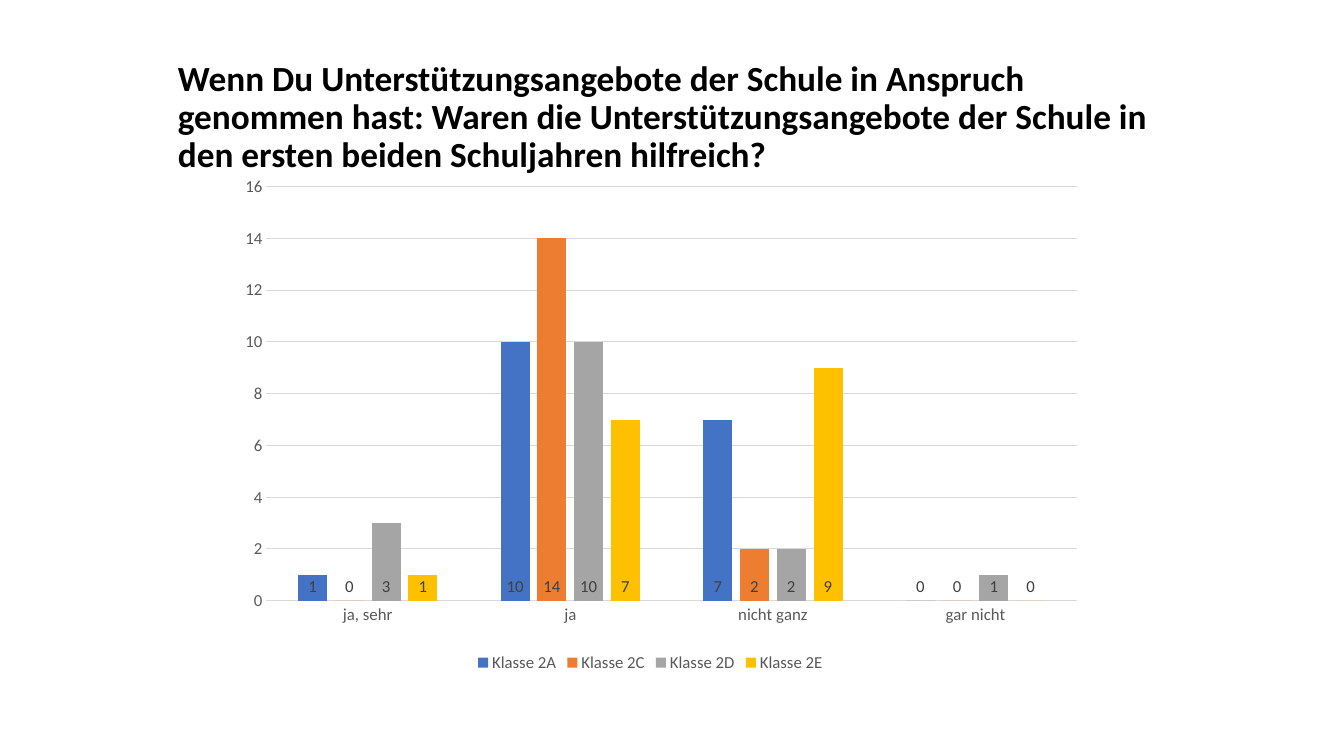
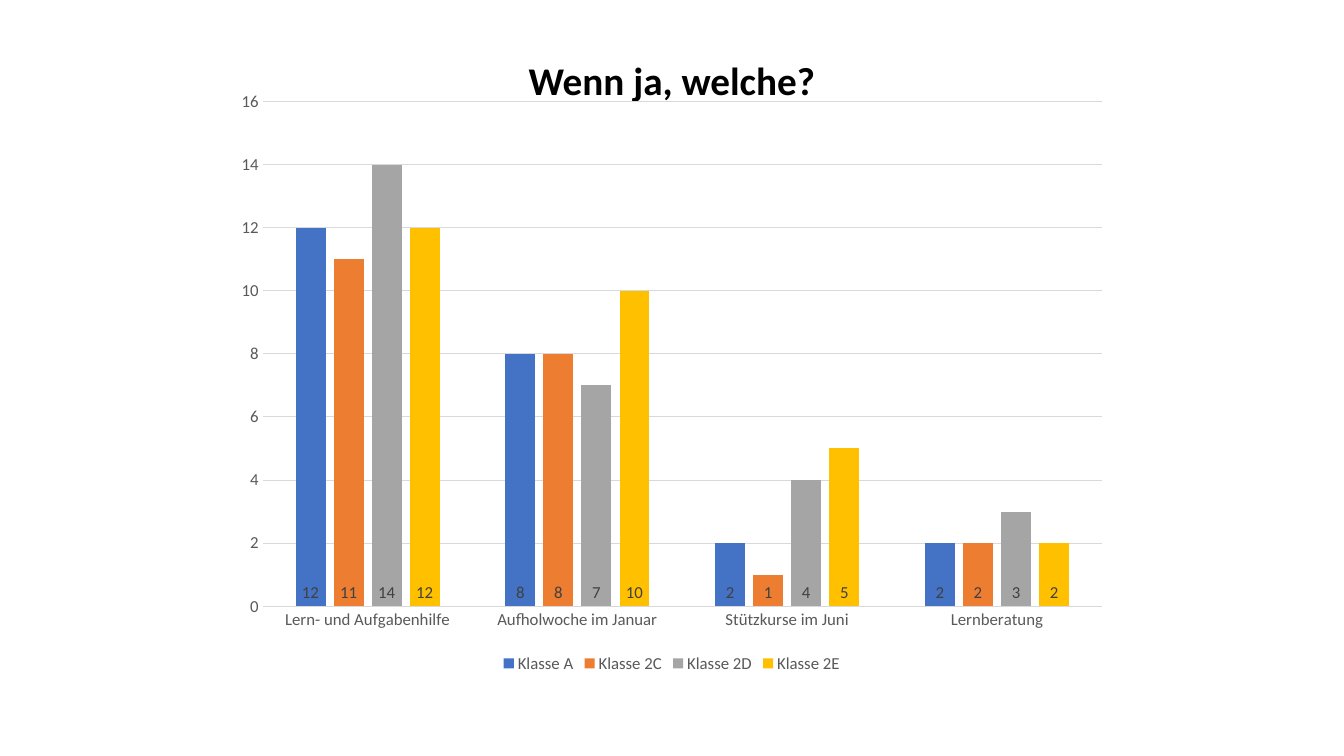
from dataclasses import dataclass

from lxml import etree
from pptx import Presentation
from pptx.chart.data import CategoryChartData
from pptx.dml.color import RGBColor
from pptx.enum.chart import XL_CHART_TYPE as ChartType
from pptx.enum.chart import XL_LABEL_POSITION as LabelPosition
from pptx.enum.chart import XL_LEGEND_POSITION as LegendPosition
from pptx.enum.chart import XL_TICK_MARK as TickMark
from pptx.enum.text import MSO_ANCHOR as Anchor
from pptx.enum.text import MSO_AUTO_SIZE as AutoSize
from pptx.enum.text import PP_ALIGN as Align
from pptx.oxml.ns import qn
from pptx.util import Cm, Pt


@dataclass(frozen=True)
class Theme:
    font: str = "Calibri"
    title_color: str = "000000"
    axis_color: str = "595959"
    label_color: str = "404040"
    line_color: str = "D9D9D9"
    series_colors: tuple = ("4472C4", "ED7D31", "A5A5A5", "FFC000")
    chart_size: float = 12
    line_width: float = 0.75


THEME = Theme()
TITLE_ONLY = 5


def rgb(color):
    return RGBColor.from_string(color)


def style_font(font, size, color, bold=False):
    font.name = THEME.font
    font.size = Pt(size)
    font.bold = bold
    font.color.rgb = rgb(color)


def style_line(line):
    line.color.rgb = rgb(THEME.line_color)
    line.width = Pt(THEME.line_width)


# Title
def set_title(page, text, box, size, align):
    title = page.shapes.title
    title.left, title.top, title.width, title.height = map(Cm, box)
    frame = title.text_frame
    frame.text = text
    frame.word_wrap = True
    frame.auto_size = AutoSize.NONE
    frame.vertical_anchor = Anchor.BOTTOM
    para = frame.paragraphs[0]
    para.alignment = align
    para.line_spacing = 0.9
    style_font(para.font, size, THEME.title_color, bold=True)


# Chart
def style_axes(chart):
    for axis in (chart.category_axis, chart.value_axis):
        axis.major_tick_mark = axis.minor_tick_mark = TickMark.NONE
        style_font(axis.tick_labels.font, THEME.chart_size, THEME.axis_color)
    style_line(chart.category_axis.format.line)
    values = chart.value_axis
    values.format.line.fill.background()
    style_line(values.major_gridlines.format.line)
    values.minimum_scale, values.maximum_scale = 0, 16
    values.major_unit = 2


def style_series(series, color):
    series.format.fill.solid()
    series.format.fill.fore_color.rgb = rgb(color)
    series.invert_if_negative = False
    labels = series.data_labels
    labels.show_value = True
    labels.position = LabelPosition.INSIDE_BASE
    style_font(labels.font, THEME.chart_size, THEME.label_color)


def place_plot(chart, fractions):
    """Fix the inner plot area as x, y, w, h fractions of the chart."""
    plot_area = chart.plots[0]._element.getparent()
    for old in plot_area.findall(qn("c:layout")):
        plot_area.remove(old)
    layout = etree.Element(qn("c:layout"))
    manual = etree.SubElement(layout, qn("c:manualLayout"))
    settings = [("layoutTarget", "inner"), ("xMode", "edge"), ("yMode", "edge")]
    for name, value in settings + list(zip("xywh", fractions)):
        etree.SubElement(manual, qn(f"c:{name}")).set("val", str(value))
    plot_area.insert(0, layout)


def add_column_chart(page, box, categories, rows, plot_box=None):
    data = CategoryChartData(number_format="General")
    data.categories = categories
    for name, values in rows.items():
        data.add_series(name, values)
    chart = page.shapes.add_chart(
        ChartType.COLUMN_CLUSTERED, *map(Cm, box), data).chart
    chart.has_title = False
    style_font(chart.font, THEME.chart_size, THEME.axis_color)
    chart.has_legend = True
    chart.legend.position = LegendPosition.BOTTOM
    chart.legend.include_in_layout = False
    style_font(chart.legend.font, THEME.chart_size, THEME.axis_color)
    plot = chart.plots[0]
    plot.gap_width, plot.overlap = 219, -27
    plot.vary_by_categories = False
    style_axes(chart)
    for series, color in zip(plot.series, THEME.series_colors):
        style_series(series, color)
    if plot_box:
        place_plot(chart, plot_box)


# Slides
def add_page(deck):
    return deck.slides.add_slide(deck.slide_layouts[TITLE_ONLY])


def build_helpfulness(deck):
    page = add_page(deck)
    set_title(
        page,
        "Wenn Du Unterstützungsangebote der Schule in Anspruch genommen hast: "
        "Waren die Unterstützungsangebote der Schule in den ersten beiden "
        "Schuljahren hilfreich?",
        (4.23, 1.57, 25.4, 2.98), 25.2, Align.LEFT)
    add_column_chart(
        page, (5.64, 4.32, 21.51, 12.73),
        ["ja, sehr", "ja", "nicht ganz", "gar nicht"],
        {"Klasse 2A": (1, 10, 7, 0),
         "Klasse 2C": (0, 14, 2, 0),
         "Klasse 2D": (3, 10, 2, 1),
         "Klasse 2E": (1, 7, 9, 0)},
        plot_box=(0.05, 0.03, 0.95, 0.82))


def build_offers(deck):
    page = add_page(deck)
    set_title(page, "Wenn ja, welche?", (4.23, 1.35, 25.4, 1.4), 28, Align.CENTER)
    add_column_chart(
        page, (5.64, 2.01, 22.58, 15.06),
        ["Lern- und Aufgabenhilfe", "Aufholwoche im Januar",
         "Stützkurse im Juni", "Lernberatung"],
        {"Klasse A": (12, 8, 2, 2),
         "Klasse 2C": (11, 8, 1, 2),
         "Klasse 2D": (14, 7, 4, 3),
         "Klasse 2E": (12, 10, 5, 2)})


def main():
    deck = Presentation()
    deck.slide_width, deck.slide_height = Cm(33.87), Cm(19.05)
    build_helpfulness(deck)
    build_offers(deck)
    deck.save("out.pptx")


if __name__ == "__main__":
    main()
